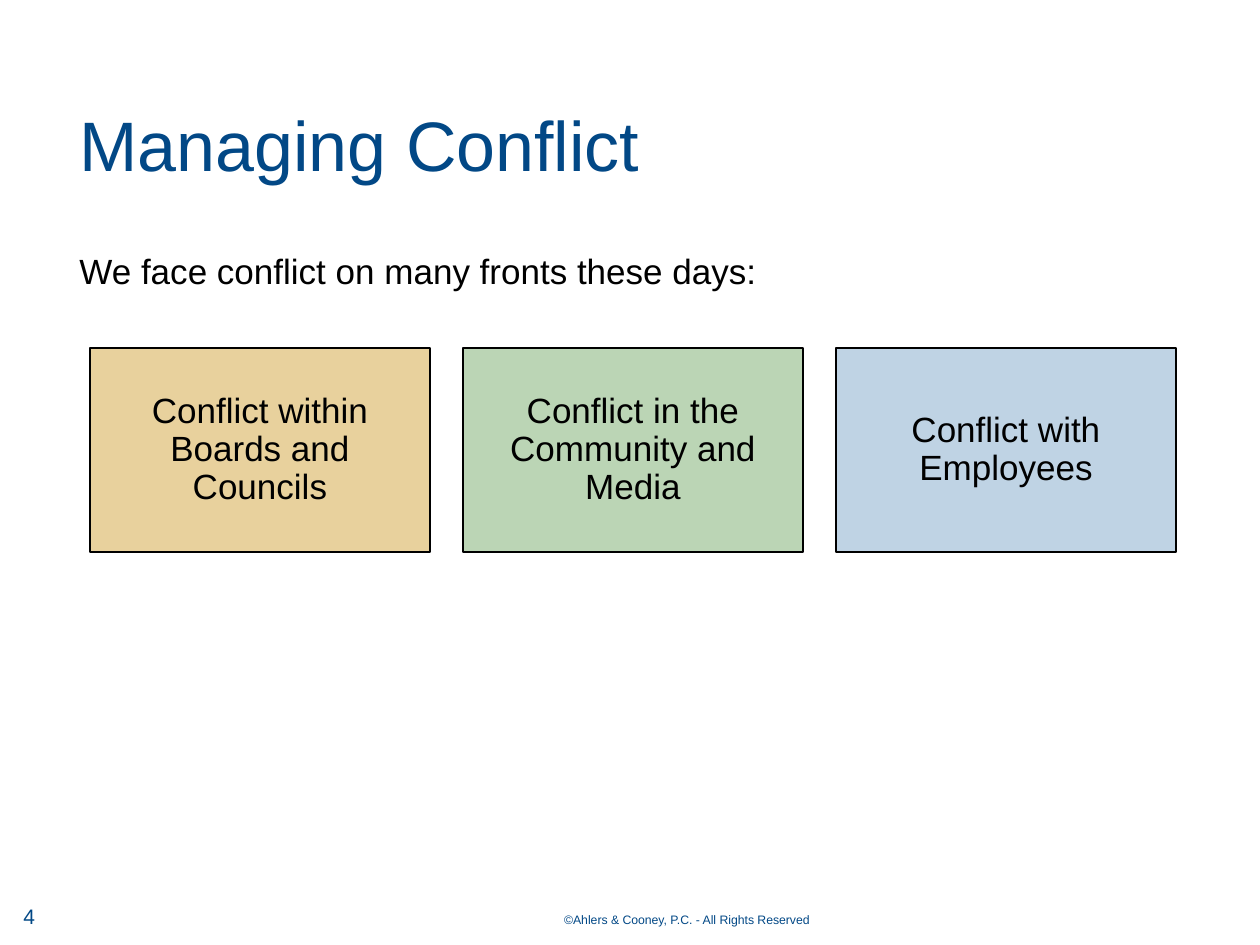
from pptx import Presentation
from pptx.dml.color import RGBColor
from pptx.enum.shapes import MSO_SHAPE
from pptx.enum.text import MSO_ANCHOR, PP_ALIGN
from pptx.util import Pt

PX = 914400 / 126
RECT = MSO_SHAPE.RECTANGLE
TOP, MIDDLE = MSO_ANCHOR.TOP, MSO_ANCHOR.MIDDLE
LEFT, CENTER, RIGHT = PP_ALIGN.LEFT, PP_ALIGN.CENTER, PP_ALIGN.RIGHT
COLORS = {"navy": "024886", "black": "000000", "sand": "E8D19D",
          "green": "BBD5B5", "blue": "BFD3E4"}


def px(*lengths):
    return [round(n * PX) for n in lengths]


def write(s, text, size, color, align=LEFT, anchor=TOP, spacing=1.0):
    """Put one paragraph of Arial text into a shape or text box."""
    tf = s.text_frame
    tf.word_wrap = True
    tf.vertical_anchor = anchor
    p = tf.paragraphs[0]
    p.alignment = align
    p.line_spacing = spacing
    r = p.add_run()
    r.text = text
    r.font.name = "Arial"
    r.font.size = Pt(size)
    r.font.color.rgb = RGBColor.from_string(COLORS[color])


prs = Presentation()
prs.slide_width, prs.slide_height = px(1260, 945)
slide = prs.slides.add_slide(prs.slide_layouts[6])

# Title, lead-in, page number and footer
texts = [
    ((67, 79, 1164, 139), "Managing Conflict", 40, "navy", LEFT, MIDDLE, 0.9),
    ((67, 248, 1134, 558), "We face conflict on many fronts these days:",
     20, "black", LEFT, TOP, 0.9),
    ((11, 891, 284, 50), "4", 12, "navy", LEFT, MIDDLE, 1.0),
    ((488, 906, 334, 38), "©Ahlers & Cooney, P.C. - All Rights Reserved",
     7, "navy", RIGHT, TOP, 1.0),
]
for box, *content in texts:
    write(slide.shapes.add_textbox(*px(*box)), *content)

# Row of conflict cards
card_left, card_top, card_w, card_h, gap = 90, 348, 340, 204, 33
cards = [
    ("Conflict within Boards and Councils", "sand"),
    ("Conflict in the Community and Media", "green"),
    ("Conflict with Employees", "blue"),
]
for i, (label, fill) in enumerate(cards):
    left = card_left + i * (card_w + gap)
    s = slide.shapes.add_shape(RECT, *px(left, card_top, card_w, card_h))
    s.shadow.inherit = False
    s.fill.solid()
    s.fill.fore_color.rgb = RGBColor.from_string(COLORS[fill])
    s.line.color.rgb = RGBColor.from_string(COLORS["black"])
    s.line.width = Pt(0.75)
    tf = s.text_frame
    tf.margin_left, tf.margin_top, tf.margin_right, tf.margin_bottom = px(10, 10, 10, 10)
    write(s, label, 20, "black", CENTER, MIDDLE, 0.9)

prs.save("out.pptx")
